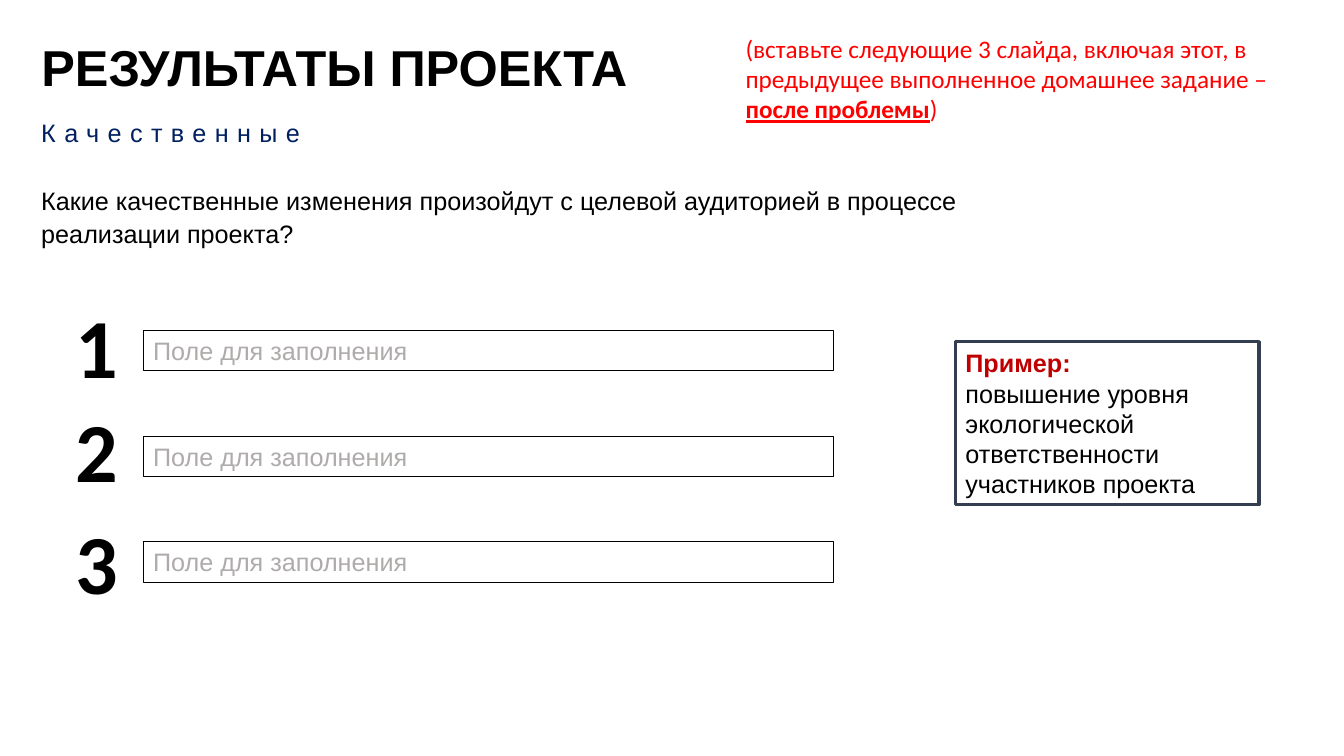
from pptx import Presentation
from pptx import util as u
from pptx.dml.color import RGBColor
from pptx.enum import shapes, text


def paint(target, colour):
    target.rgb = RGBColor.from_string(colour)


def write(paragraph, content, font="Arial", size=18, colour="000000",
          bold=False, underline=False, tracking=0):
    run = paragraph.add_run()
    run.text = content
    run.font.name = font
    run.font.size = u.Pt(size)
    run.font.bold = bold
    run.font.underline = underline
    paint(run.font.color, colour)
    if tracking:
        run.font._element.set("spc", str(tracking * 100))


class Page:
    black = "000000"
    navy = "002060"
    slate = "333F50"
    grey = "AFABAB"
    crimson = "C00000"
    red = "FF0000"

    def __init__(self, slide):
        self.slide = slide

    def fill_frame(self, shape, paragraphs, align=text.PP_ALIGN.LEFT,
                   anchor=text.MSO_ANCHOR.TOP):
        frame = shape.text_frame
        frame.word_wrap = True
        frame.auto_size = text.MSO_AUTO_SIZE.NONE
        frame.vertical_anchor = anchor
        for index, runs in enumerate(paragraphs):
            paragraph = frame.add_paragraph() if index else frame.paragraphs[0]
            paragraph.alignment = align
            for content, style in runs:
                write(paragraph, content, **style)
        return frame

    def title(self, content, left, top, width, height):
        heading = self.slide.shapes.title
        heading.left, heading.top = u.Cm(left), u.Cm(top)
        heading.width, heading.height = u.Cm(width), u.Cm(height)
        self.fill_frame(heading, [[(content, dict(size=36, bold=True))]])

    def label(self, runs, left, top, width, height, **layout):
        box = self.slide.shapes.add_textbox(
            u.Cm(left), u.Cm(top), u.Cm(width), u.Cm(height))
        return self.fill_frame(box, [runs], **layout)

    def panel(self, paragraphs, left, top, width, height, border, weight):
        box = self.slide.shapes.add_shape(
            shapes.MSO_SHAPE.RECTANGLE,
            u.Cm(left), u.Cm(top), u.Cm(width), u.Cm(height))
        box.shadow.inherit = False
        box.fill.background()
        paint(box.line.color, border)
        box.line.width = u.Pt(weight)
        self.fill_frame(box, paragraphs, anchor=text.MSO_ANCHOR.MIDDLE)


def main():
    deck = Presentation()
    deck.slide_width, deck.slide_height = u.Cm(33.87), u.Cm(19.05)
    page = Page(deck.slides.add_slide(deck.slide_layouts[5]))

    margin = 0.79
    page.title("РЕЗУЛЬТАТЫ ПРОЕКТА", margin, 0.79, 19.13, 1.8)
    page.label([("Качественные", dict(colour=page.navy, tracking=6))],
               margin, 2.84, 16.94, 1.02)

    question = page.label(
        [("Какие качественные изменения произойдут с целевой аудиторией "
          "в процессе реализации проекта?", {})], margin, 4.5, 25.3, 1.85)
    question.paragraphs[0].line_spacing = 1.07
    question.paragraphs[0].space_after = u.Pt(8)

    note = dict(font="Calibri", colour=page.red)
    page.label(
        [("(вставьте следующие 3 слайда, включая этот, в предыдущее "
          "выполненное домашнее задание – ", note),
         ("после проблемы", dict(note, bold=True, underline=True)),
         (")", note)], 18.54, 0.71, 14.55, 2.57)

    numeral = dict(font="Calibri", size=60, bold=True)
    prompt = ("Поле для заполнения", dict(colour=page.grey))
    for row, number_top in enumerate((7.29, 9.91, 12.75)):
        page.label([(str(row + 1), numeral)], 1.07, number_top, 2.16, 2.82,
                   align=text.PP_ALIGN.RIGHT)
        page.panel([[prompt]], 3.61, 8.33 + row * 2.66, 17.4, 1.02,
                   page.black, 0.75)

    page.panel(
        [[("Пример:", dict(colour=page.crimson, bold=True))],
         [("повышение уровня экологической ответственности "
           "участников проекта", {})]],
        24.08, 8.61, 7.65, 4.11, page.slate, 2.25)

    deck.save("out.pptx")


if __name__ == "__main__":
    main()
